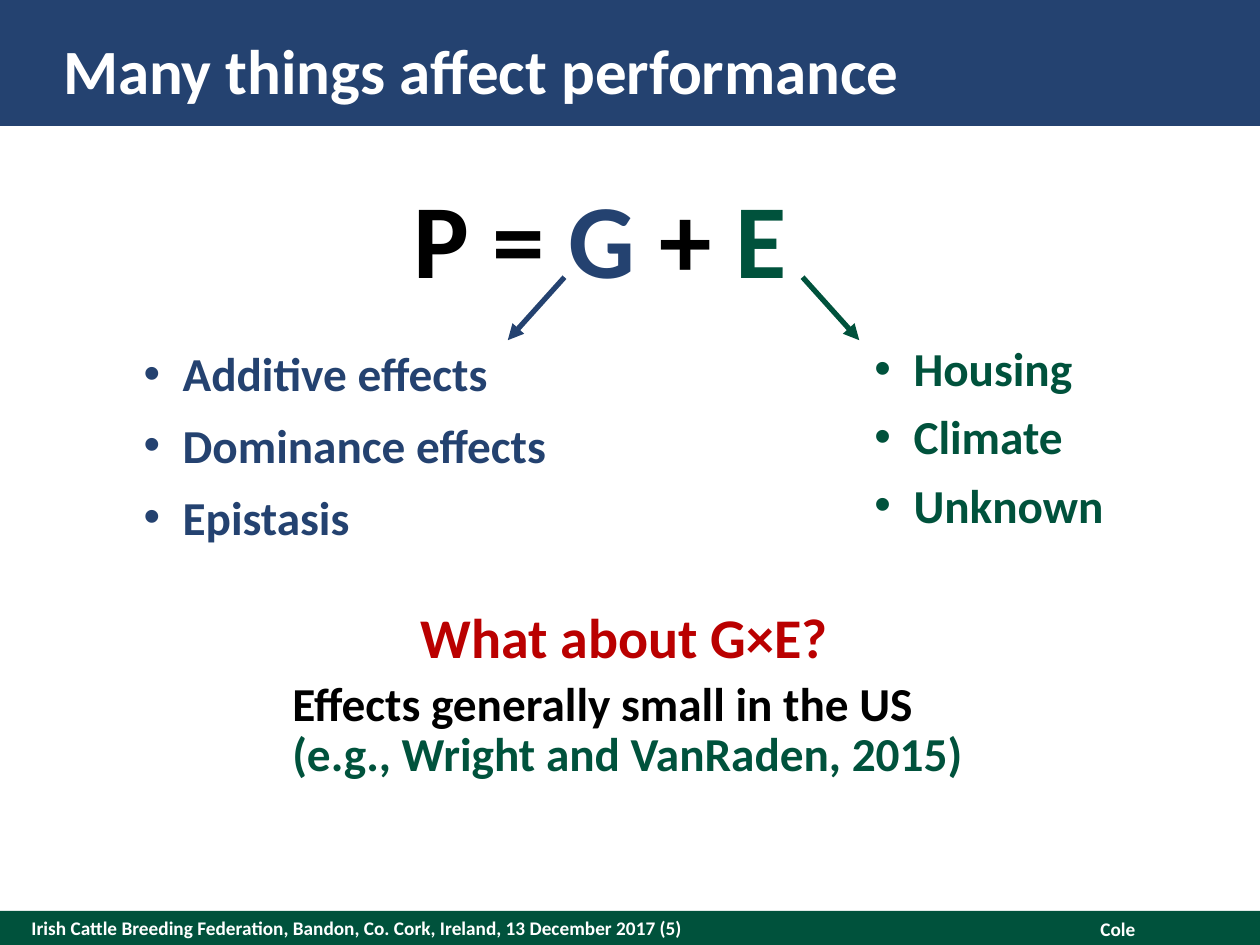
import pptx
import pptx.dml.color
import pptx.enum.shapes
import pptx.enum.text
import pptx.oxml
import pptx.oxml.ns
import pptx.util

RGBColor = pptx.dml.color.RGBColor
BLUE = RGBColor(0x24, 0x42, 0x70)
GREEN = RGBColor(0x00, 0x52, 0x3C)
RED = RGBColor(0xBA, 0x00, 0x00)
BLACK = RGBColor(0x00, 0x00, 0x00)
WHITE = RGBColor(0xFF, 0xFF, 0xFF)

ALIGN = pptx.enum.text.PP_ALIGN
ANCHOR = pptx.enum.text.MSO_ANCHOR
COLUMNS, ROWS = 100, 75


class SlideBuilder:
    """Holds the style and the current slide, measured on a grid of 100 columns by 75 rows."""

    font_name = "Calibri"
    namespace = pptx.oxml.ns.nsdecls("a")

    def __init__(self, presentation):
        self.column = presentation.slide_width / COLUMNS
        self.row = presentation.slide_height / ROWS
        self.slide = presentation.slides.add_slide(presentation.slide_layouts[3])

    def box(self, left, top, width, height):
        return (round(left * self.column), round(top * self.row),
                round(width * self.column), round(height * self.row))

    def place(self, shape, area):
        shape.left, shape.top, shape.width, shape.height = self.box(*area)

    def element(self, markup):
        return pptx.oxml.parse_xml(f"<a:{markup.replace('/>', '')} {self.namespace}/>")

    def set_frame(self, frame, insets, anchor=ANCHOR.TOP):
        frame.word_wrap = True
        frame.auto_size = pptx.enum.text.MSO_AUTO_SIZE.NONE
        frame.vertical_anchor = anchor
        left, top, right, bottom = (pptx.util.Inches(inset) for inset in insets)
        frame.margin_left, frame.margin_top = left, top
        frame.margin_right, frame.margin_bottom = right, bottom

    def fill_paragraph(self, paragraph, pieces, size, align=ALIGN.LEFT, spacing=None, after=0):
        paragraph.alignment = align
        paragraph.space_before = pptx.util.Pt(0)
        paragraph.space_after = pptx.util.Pt(after)
        if spacing:
            paragraph.line_spacing = pptx.util.Pt(spacing)
        for text, color in pieces:
            run = paragraph.add_run()
            run.text = text
            run.font.name = self.font_name
            run.font.size = pptx.util.Pt(size)
            run.font.bold = True
            run.font.color.rgb = color

    def bar(self, area, color):
        shape = self.slide.shapes.add_shape(
            pptx.enum.shapes.MSO_SHAPE.RECTANGLE, *self.box(*area))
        shape.shadow.inherit = False
        shape.fill.solid()
        shape.fill.fore_color.rgb = color
        shape.line.fill.background()
        shape.element.getparent().insert(2, shape.element)

    def title(self, text, area):
        shape = self.slide.shapes.title
        self.place(shape, area)
        self.set_frame(shape.text_frame, (0, 0, 0, 0), ANCHOR.MIDDLE)
        self.fill_paragraph(shape.text_frame.paragraphs[0], [(text, WHITE)], 36)

    def bullets(self, index, items, area, color, spacings):
        shape = self.slide.placeholders[index]
        self.place(shape, area)
        frame = shape.text_frame
        self.set_frame(frame, (0.25, 0.1, 0.25, 0.1))
        indent = pptx.util.Inches(0.31)
        for number, (item, spacing) in enumerate(zip(items, spacings)):
            paragraph = frame.add_paragraph() if number else frame.paragraphs[0]
            properties = paragraph._p.get_or_add_pPr()
            properties.set("marL", str(indent))
            properties.set("indent", str(-indent))
            properties.append(self.element('buChar char="•"'))
            self.fill_paragraph(paragraph, [(item, color)], 27, spacing=spacing, after=12)

    def text(self, area, insets=(0, 0, 0, 0), anchor=ANCHOR.TOP):
        frame = self.slide.shapes.add_textbox(*self.box(*area)).text_frame
        self.set_frame(frame, insets, anchor)
        return frame

    def arrow(self, start, end, color):
        connector = self.slide.shapes.add_connector(
            pptx.enum.shapes.MSO_CONNECTOR.STRAIGHT, *self.box(*start, *end))
        connector.line.color.rgb = color
        connector.line.width = pptx.util.Pt(3)
        connector.line._get_or_add_ln().append(self.element('tailEnd type="triangle"'))
        connector._element.spPr.append(self.element("effectLst"))


def main():
    presentation = pptx.Presentation()
    presentation.slide_width = pptx.util.Inches(10)
    presentation.slide_height = pptx.util.Inches(7.5)
    builder = SlideBuilder(presentation)

    builder.bar((0, 0, COLUMNS, 10), BLUE)
    builder.bar((0, 72.3, COLUMNS, 2.7), GREEN)
    builder.title("Many things affect performance", (5, 2, 90, 7))

    footer = builder.text((2.5, 72.3, 70, 2.7), anchor=ANCHOR.MIDDLE)
    builder.fill_paragraph(footer.paragraphs[0], [(
        "Irish Cattle Breeding Federation, Bandon, Co. Cork, Ireland, 13 December 2017 (5)",
        WHITE)], 11)
    author = builder.text((71.1, 72.3, 20, 2.9), (0.1, 0.05, 0.1, 0.05))
    builder.fill_paragraph(author.paragraphs[0], [("Cole", WHITE)], 11, ALIGN.RIGHT)

    equation = builder.text((5.4, 13, 89.2, 9.4), (2.74, 0.08, 0.1, 0.05))
    builder.fill_paragraph(equation.paragraphs[0], [
        ("P = ", BLACK), ("G", BLUE), (" + ", BLACK), ("E", GREEN)], 60)

    builder.bullets(1, ["Additive effects", "Dominance effects", "Epistasis"],
                    (8.9, 26.8, 37.4, 18), BLUE, (29, 29, 29))
    builder.bullets(2, ["Housing", "Climate", "Unknown"],
                    (66.9, 26.4, 23.2, 18), GREEN, (29, 27, 27))
    builder.arrow((44.8, 22), (40.3, 27), BLUE)
    builder.arrow((63.7, 22), (68.2, 27), GREEN)

    interaction = builder.text((23.2, 49.1, 53.7, 13))
    builder.fill_paragraph(interaction.paragraphs[0], [("What about G×E? ", RED)], 32,
                           ALIGN.CENTER, spacing=29, after=6)
    builder.fill_paragraph(interaction.add_paragraph(), [
        ("Effects generally small in the US ", BLACK),
        ("(e.g., Wright and VanRaden, 2015)", GREEN)], 27, spacing=29, after=12)

    presentation.save("out.pptx")


if __name__ == "__main__":
    main()
